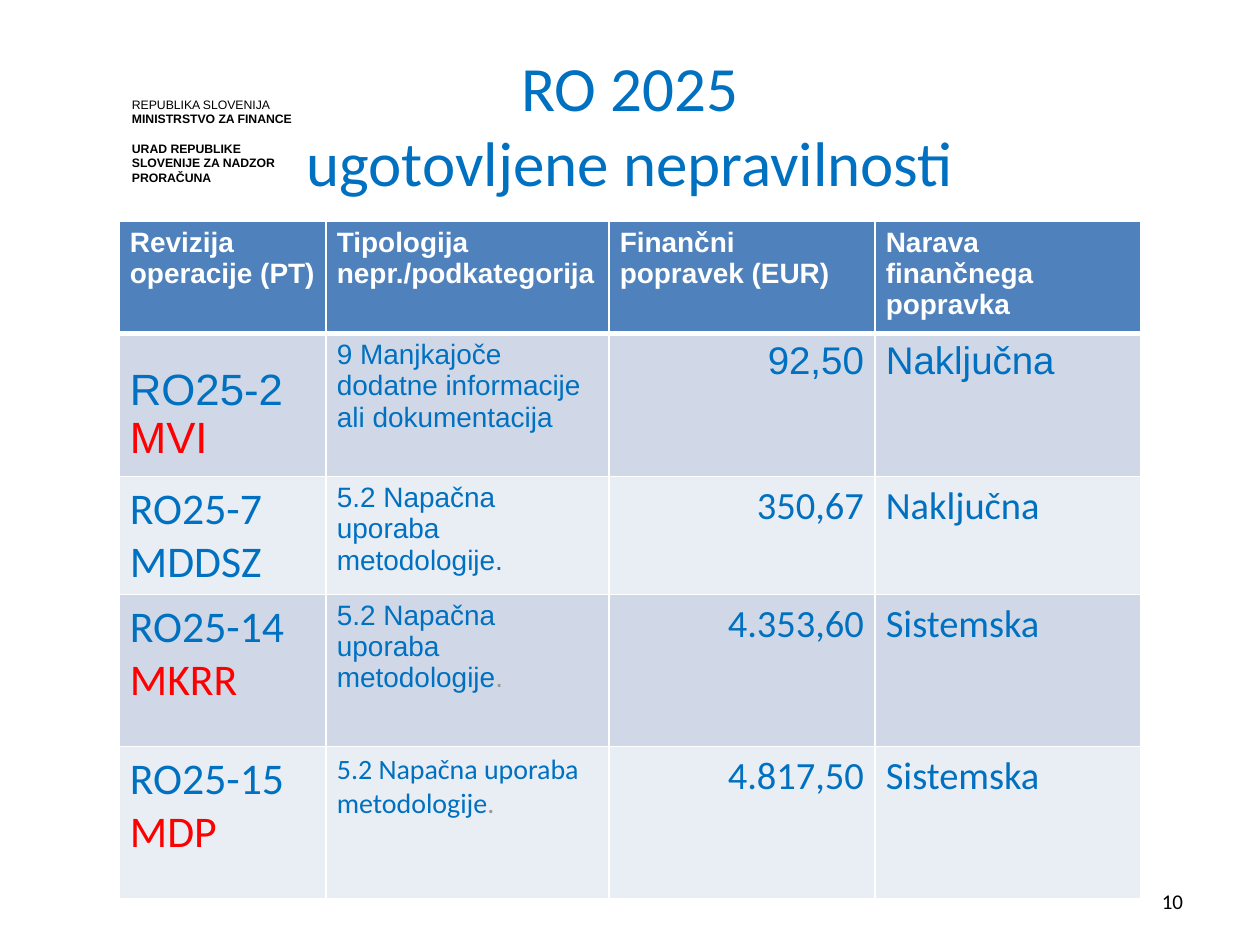
import pptx
import pptx.dml.color
import pptx.enum.text
import pptx.util
from lxml import etree
from pptx.oxml.ns import qn

RGB = pptx.dml.color.RGBColor
BLUE = RGB(0x00, 0x70, 0xC0)
RED = RGB(0xFF, 0x00, 0x00)
GREY = RGB(0x99, 0x99, 0x99)
BLACK = RGB(0x00, 0x00, 0x00)
WHITE = RGB(0xFF, 0xFF, 0xFF)
HEADER_FILL = RGB(0x4F, 0x81, 0xBD)
BAND_FILLS = (RGB(0xD0, 0xD8, 0xE8), RGB(0xE9, 0xED, 0xF4))

LEFT = pptx.enum.text.PP_ALIGN.LEFT
CENTER = pptx.enum.text.PP_ALIGN.CENTER
RIGHT = pptx.enum.text.PP_ALIGN.RIGHT
TOP = pptx.enum.text.MSO_ANCHOR.TOP
MIDDLE = pptx.enum.text.MSO_ANCHOR.MIDDLE

PX_PER_INCH = 126
COLUMN_WIDTHS = (207, 283, 266, 266)
ROW_HEIGHTS = (103, 137, 118, 152, 152)
HEADERS = (
    "Revizija operacije (PT)",
    "Tipologija nepr./podkategorija",
    "Finančni popravek (EUR)",
    "Narava finančnega popravka",
)
METHOD = "5.2 Napačna uporaba metodologije"
FINDINGS = (
    ("RO25-2", "MVI", RED, "Arial",
     "9 Manjkajoče dodatne informacije ali dokumentacija", "", BLUE, "Arial",
     "92,50", "Naključna"),
    ("RO25-7", "MDDSZ", BLUE, "Calibri", METHOD, ".", BLUE, "Arial",
     "350,67", "Naključna"),
    ("RO25-14", "MKRR", RED, "Calibri", METHOD, ".", GREY, "Arial",
     "4.353,60", "Sistemska"),
    ("RO25-15", "MDP", RED, "Calibri", METHOD, ".", GREY, "Calibri",
     "4.817,50", "Sistemska"),
)


def px(length):
    return pptx.util.Emu(round(length * 914400 / PX_PER_INCH))


def set_attributes(target, values):
    for name, value in values.items():
        setattr(target, name, value)


def font_format(size, name, color, bold=False):
    return {"size": pptx.util.Pt(size), "name": name, "bold": bold, "color": color}


def add_span(para, text, style):
    span = para.add_run()
    span.text = text
    set_attributes(span.font, {key: style[key] for key in ("size", "name", "bold")})
    span.font.color.rgb = style["color"]


def write_paragraphs(frame, paragraphs, **layout):
    for index, spans in enumerate(paragraphs):
        para = frame.paragraphs[0] if index == 0 else frame.add_paragraph()
        set_attributes(para, layout)
        for text, style in spans:
            for line_index, line in enumerate(text.split("\n")):
                if line_index:
                    para.add_line_break()
                if line:
                    add_span(para, line, style)


def add_box(page, bounds, margins, anchor=TOP):
    box = page.shapes.add_textbox(*map(px, bounds))
    left, top, right, bottom = map(px, margins)
    set_attributes(box.text_frame, {
        "word_wrap": True,
        "vertical_anchor": anchor,
        "margin_left": left,
        "margin_top": top,
        "margin_right": right,
        "margin_bottom": bottom,
    })
    return box.text_frame


def set_borders(cell, widths):
    properties = cell._tc.get_or_add_tcPr()
    for side, width in zip("LRTB", widths):
        line = etree.SubElement(properties, qn(f"a:ln{side}"), w=str(pptx.util.Pt(width)))
        fill = etree.SubElement(line, qn("a:solidFill"))
        etree.SubElement(fill, qn("a:srgbClr"), val=str(WHITE))


def fill_cell(cell, paragraphs, fill, borders, alignment=LEFT, top=6):
    set_attributes(cell, {
        "margin_left": px(11),
        "margin_right": px(11),
        "margin_top": px(top),
        "margin_bottom": px(6),
    })
    set_borders(cell, borders)
    cell.fill.solid()
    cell.fill.fore_color.rgb = fill
    write_paragraphs(cell.text_frame, paragraphs, alignment=alignment)


def add_office_heading(page):
    frame = add_box(page, (132, 97, 166, 71), (0, 0, 0, 0))
    plain = font_format(7, "Arial", BLACK)
    bold = font_format(7, "Arial", BLACK, True)
    line = pptx.util.Pt(8.4)
    write_paragraphs(frame, [
        [("REPUBLIKA SLOVENIJA", plain)],
        [("MINISTRSTVO ZA FINANCE", bold)],
        [("URAD REPUBLIKE SLOVENIJE ZA NADZOR PRORAČUNA", bold)],
    ], line_spacing=line)
    frame.paragraphs[-1].space_before = line


def add_title(page):
    frame = add_box(page, (63, 38, 1134, 158), (13, 10, 13, 6))
    style = font_format(36, "Calibri", BLUE)
    write_paragraphs(frame, [[("RO 2025\nugotovljene nepravilnosti", style)]],
                     alignment=CENTER)


def add_page_number(page):
    frame = add_box(page, (903, 876, 293, 50), (13, 6, 13, 6), MIDDLE)
    write_paragraphs(frame, [[("10", font_format(12, "Calibri", BLACK))]],
                     alignment=RIGHT, space_after=pptx.util.Pt(6))


def add_findings_table(page):
    graphic = page.shapes.add_table(
        len(ROW_HEIGHTS), len(COLUMN_WIDTHS), px(119), px(221),
        px(sum(COLUMN_WIDTHS)), px(sum(ROW_HEIGHTS)))
    table = graphic.table
    set_attributes(table, {"first_row": False, "horz_banding": False})
    for column, width in zip(table.columns, COLUMN_WIDTHS):
        column.width = px(width)
    for row, height in zip(table.rows, ROW_HEIGHTS):
        row.height = px(height)

    header_style = font_format(16, "Arial", WHITE, True)
    for column, header in enumerate(HEADERS):
        fill_cell(table.cell(0, column), [[(header, header_style)]],
                  HEADER_FILL, (1, 1, 1, 3))

    for row, finding in enumerate(FINDINGS, 1):
        (code, ministry, ministry_color, font, typology, stop, stop_color,
         typology_font, amount, nature) = finding
        typology_spans = [(typology, font_format(16, typology_font, BLUE)),
                          (stop, font_format(16, typology_font, stop_color))]
        value_style = font_format(22, font, BLUE)
        contents = (
            [[(code, font_format(25, font, BLUE))],
             [(ministry, font_format(25, font, ministry_color))]],
            [typology_spans],
            [[(amount, value_style)]],
            [[(nature, value_style)]],
        )
        for column, paragraphs in enumerate(contents):
            fill_cell(table.cell(row, column), paragraphs,
                      BAND_FILLS[(row - 1) % 2],
                      (1, 1, 3 if row == 1 else 1, 1),
                      RIGHT if column == 2 else LEFT,
                      32 if (row, column) == (1, 0) else 6)


def main():
    deck = pptx.Presentation()
    set_attributes(deck, {"slide_width": px(1260), "slide_height": px(945)})
    page = deck.slides.add_slide(deck.slide_layouts[6])
    add_office_heading(page)
    add_title(page)
    add_page_number(page)
    add_findings_table(page)
    deck.save("out.pptx")


if __name__ == "__main__":
    main()
